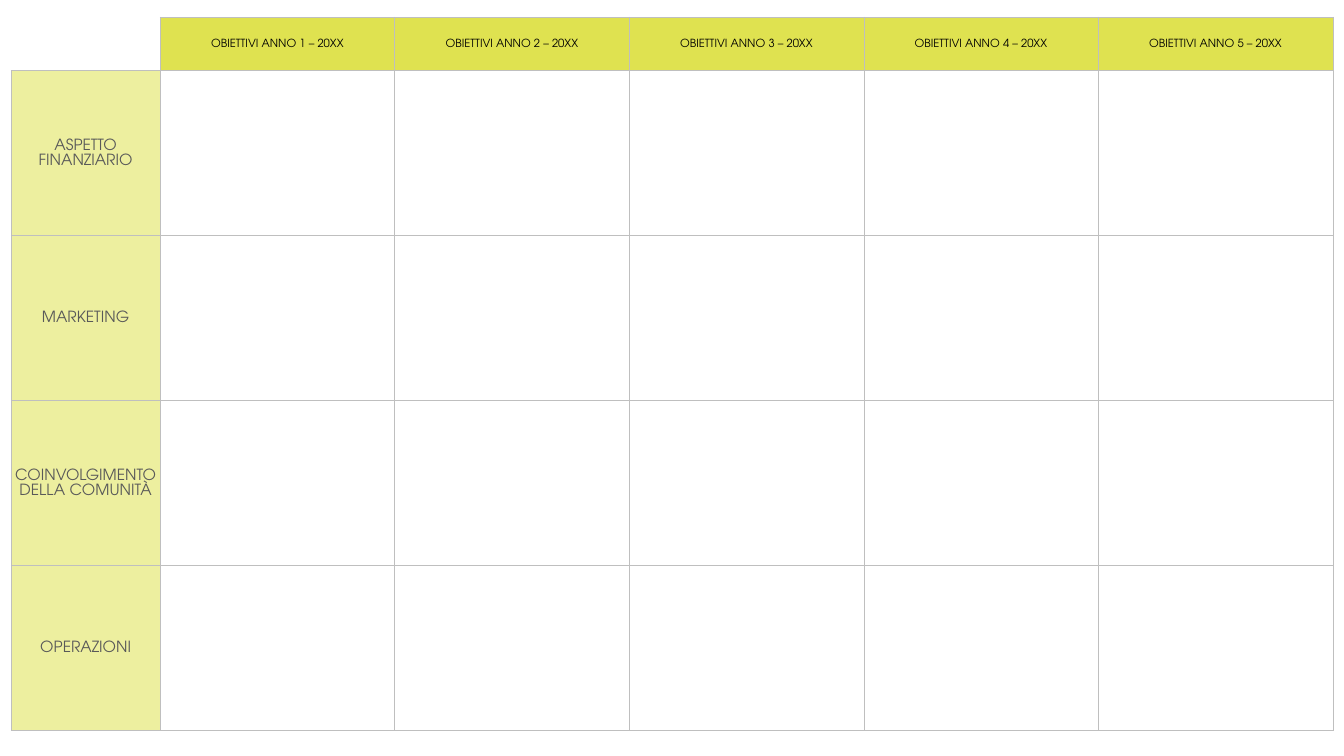
from dataclasses import dataclass

from lxml.etree import SubElement
from pptx import Presentation
from pptx.dml.color import RGBColor
from pptx.enum.text import MSO_ANCHOR, PP_ALIGN
from pptx.oxml.ns import qn
from pptx.table import _Cell as Cell
from pptx.util import Inches, Pt

LIME = RGBColor(0xDF, 0xE2, 0x50)
PALE_LIME = RGBColor(0xED, 0xEF, 0x9F)
BLACK = RGBColor(0x00, 0x00, 0x00)
DARK_GREY = RGBColor(0x59, 0x59, 0x59)
GRID_GREY = RGBColor(0xBF, 0xBF, 0xBF)

FONT = "TeX Gyre Adventor"
YEARS = 5
AREAS = ["ASPETTO FINANZIARIO", "MARKETING", "COINVOLGIMENTO DELLA COMUNITÀ", "OPERAZIONI"]
LEFT, TOP, WIDTH, HEIGHT = 0.11, 0.17, 13.11, 7.08
LABEL_W, HEADER_H = 1.48, 0.53
YEAR_W = (WIDTH - LABEL_W) / YEARS
AREA_H = (HEIGHT - HEADER_H) / len(AREAS)
CELL_FORMAT = {
    "vertical_anchor": MSO_ANCHOR.MIDDLE,
    "margin_left": Inches(0.01),
    "margin_right": Inches(0.01),
    "margin_top": Inches(0.01),
    "margin_bottom": 0,
}
PARAGRAPH_FORMAT = {
    "alignment": PP_ALIGN.CENTER,
    "line_spacing": 1.0,
    "space_after": Pt(2),
}


@dataclass(frozen=True)
class LabelStyle:
    fill: RGBColor
    color: RGBColor
    size: float


HEADER = LabelStyle(LIME, BLACK, 8)
AREA = LabelStyle(PALE_LIME, DARK_GREY, 11)


def set_borders(cell: Cell, visible: str = "LRTB") -> None:
    """Draw the visible sides in grey and clear the others."""
    tc_pr = cell._tc.get_or_add_tcPr()
    for i, side in enumerate("LRTB"):
        ln = tc_pr.makeelement(qn(f"a:ln{side}"), {"w": str(Pt(0.5))})
        tc_pr.insert(i, ln)
        if side in visible:
            fill = SubElement(ln, qn("a:solidFill"))
            SubElement(fill, qn("a:srgbClr"), val=str(GRID_GREY))
        else:
            SubElement(ln, qn("a:noFill"))


def write_label(cell: Cell, text: str, style: LabelStyle) -> None:
    cell.fill.solid()
    cell.fill.fore_color.rgb = style.fill
    p = cell.text_frame.paragraphs[0]
    r = p.add_run()
    r.text = text
    font_format = {"name": FONT, "size": Pt(style.size), "bold": False}
    for target, values in ((cell, CELL_FORMAT), (p, PARAGRAPH_FORMAT), (r.font, font_format)):
        for name, value in values.items():
            setattr(target, name, value)
    r.font.color.rgb = style.color


def main() -> None:
    prs = Presentation()
    prs.slide_width, prs.slide_height = Inches(13.33), Inches(7.5)
    s = prs.slides.add_slide(prs.slide_layouts[6])

    # Table grid
    table = s.shapes.add_table(
        len(AREAS) + 1, YEARS + 1, Inches(LEFT), Inches(TOP), Inches(WIDTH), Inches(HEIGHT)
    ).table
    table.first_row = table.horz_banding = False
    for i, col in enumerate(table.columns):
        col.width = Inches(YEAR_W if i else LABEL_W)
    for i, row in enumerate(table.rows):
        row.height = Inches(AREA_H if i else HEADER_H)

    # Clear cells with grey borders; the corner stays open
    corner = table.cell(0, 0)
    for cell in table.iter_cells():
        cell.fill.background()
        set_borders(cell, "RB" if cell == corner else "LRTB")

    # Year headers and area labels
    for year in range(1, YEARS + 1):
        write_label(table.cell(0, year), f"OBIETTIVI ANNO {year} – 20XX", HEADER)
    for i, area in enumerate(AREAS, start=1):
        write_label(table.cell(i, 0), area, AREA)

    prs.save("out.pptx")


if __name__ == "__main__":
    main()
